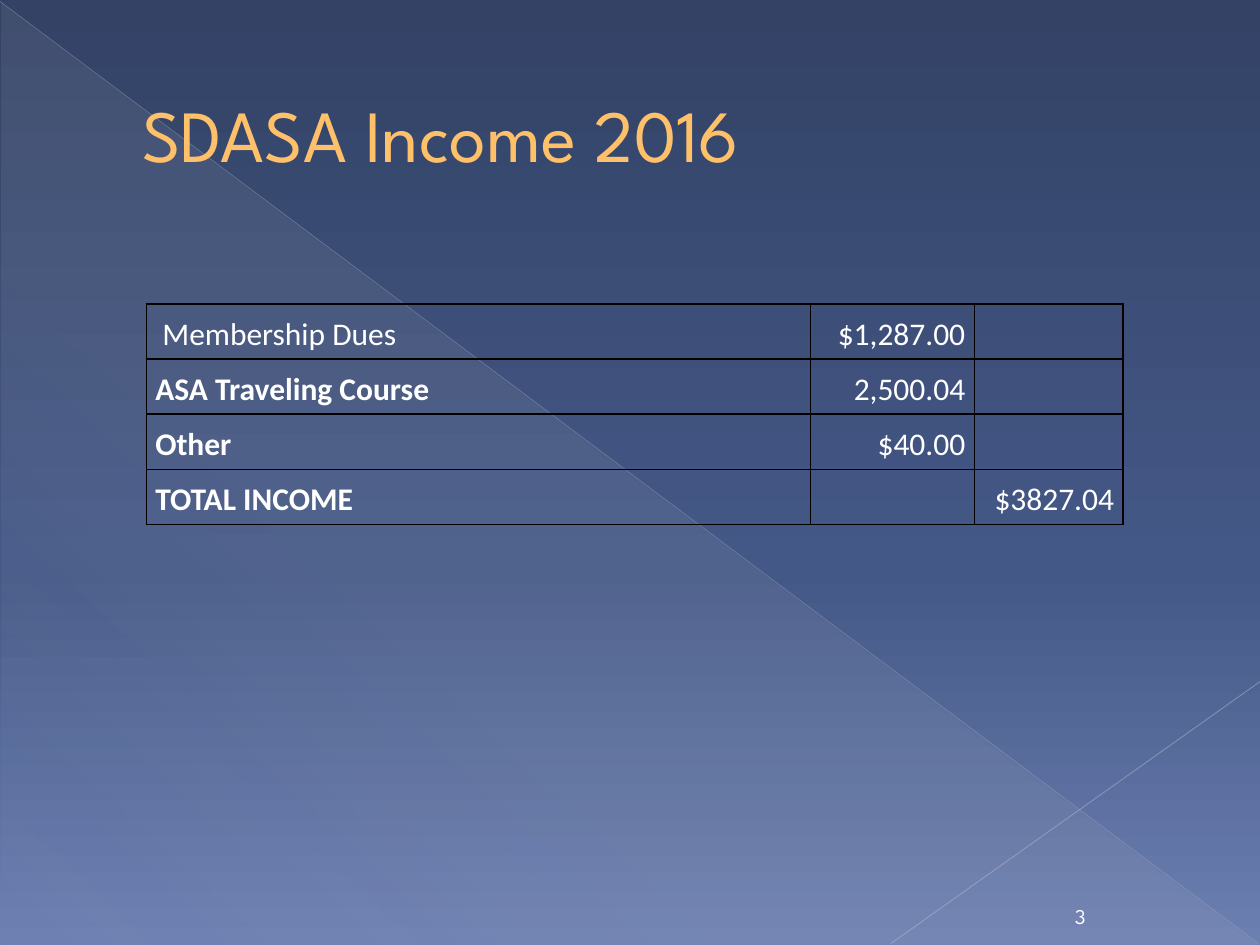
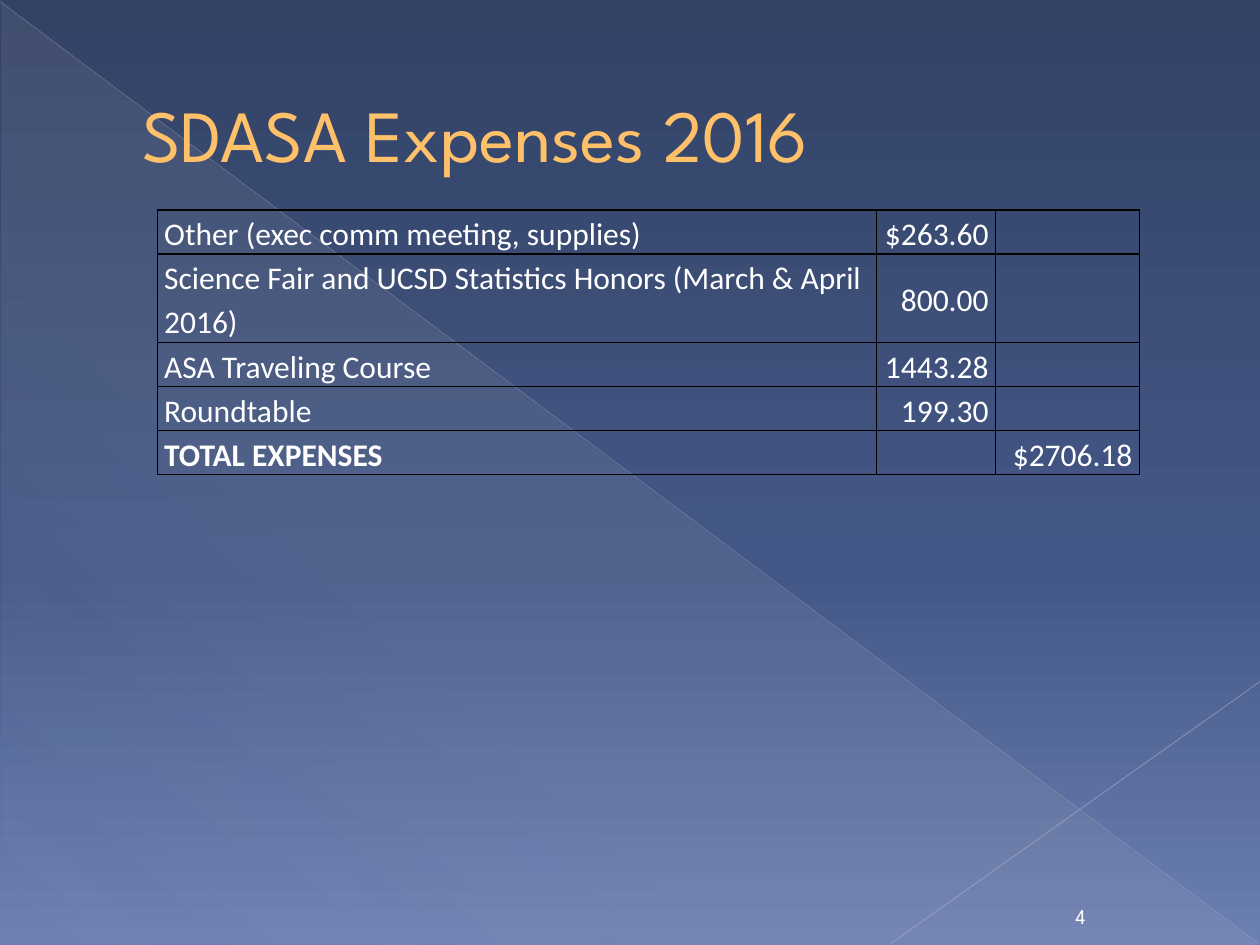
"""Build two slides with the yearly income and expenses tables."""
import pptx
import pptx.dml.color
import pptx.enum.shapes
import pptx.enum.text
import pptx.oxml
import pptx.oxml.ns
import pptx.util

Cm = pptx.util.Cm
Pt = pptx.util.Pt
ALIGN = pptx.enum.text.PP_ALIGN
ANCHOR = pptx.enum.text.MSO_ANCHOR

WHITE, GOLD, BRONZE, BLACK = "FFFFFF", "FFC06A", "A67800", "000000"
HEAD, BODY = "League Spartan", "Calibri"
SKY = [(0, "334265", 100), (60, "445887", 100), (100, "6C7FB1", 100)]
HAZE = [(0, "D4D4D6", 10), (70, "D4D4D6", 8), (100, "D4D4D6", 1)]
LINES = [
    ((0, 0.03, 25.37, 19.02), "B9BDC8", 0.39, 35),
    ((25.4, 13.74, 17.96, 19.02), "C1C4CE", 0.47, 45),
]

PAGES = [
    {
        "title": "SDASA Income 2016",
        "page": "3",
        "place": (2.95, 6.13),
        "cols": (13.39, 3.3, 3),
        "rows": [1.11] * 4,
        "inset": 0.18,
        "bold": {"ASA Traveling Course", "Other", "TOTAL INCOME"},
        "cells": [
            (" Membership Dues", "$1,287.00", ""),
            ("ASA Traveling Course", "2,500.04", ""),
            ("Other", "$40.00", ""),
            ("TOTAL INCOME", "", "$3827.04"),
        ],
    },
    {
        "title": "SDASA Expenses 2016",
        "page": "4",
        "place": (3.17, 4.23),
        "cols": (14.5, 2.4, 2.9),
        "rows": [0.89, 1.78, 0.89, 0.89, 0.89],
        "inset": 0.14,
        "bold": {"TOTAL EXPENSES"},
        "cells": [
            ("Other (exec comm meeting, supplies)", "$263.60", ""),
            ("Science Fair and UCSD Statistics Honors (March & April 2016)", "800.00", ""),
            ("ASA Traveling Course", "1443.28", ""),
            ("Roundtable", "199.30", ""),
            ("TOTAL EXPENSES", "", "$2706.18"),
        ],
    },
]


def tint(color):
    return pptx.dml.color.RGBColor.from_string(color)


def node(tag, inner="", attrs=""):
    space = pptx.oxml.ns.nsdecls("a")
    return pptx.oxml.parse_xml(f"<a:{tag} {space} {attrs}>{inner}</a:{tag}>")


def paint(color, alpha=100):
    return f'<a:srgbClr val="{color}"><a:alpha val="{alpha * 1000}"/></a:srgbClr>'


def blend(fill, root, stops, angle):
    fill.gradient()
    fill.gradient_angle = 360 - angle
    old = root.xpath(".//a:gsLst")[0]
    inner = "".join(
        f'<a:gs pos="{pos * 1000}">{paint(color, alpha)}</a:gs>'
        for pos, color, alpha in stops
    )
    old.getparent().replace(old, node("gsLst", inner))


def style(para, font, size, color, bold=False):
    for run in para.runs:
        run.font.name = font
        run.font.size = Pt(size)
        run.font.bold = bold
        run.font.color.rgb = tint(color)


def label(slide, text, box, size, color, anchor):
    frame = slide.shapes.add_textbox(*map(Cm, box)).text_frame
    frame.word_wrap = True
    frame.vertical_anchor = anchor
    frame.text = text
    para = frame.paragraphs[0]
    style(para, HEAD, size, color)
    return para


def backdrop(slide):
    blend(slide.background.fill, slide.background._cSld, SKY, 90)
    kind = pptx.enum.shapes.MSO_SHAPE.RIGHT_TRIANGLE
    haze = slide.shapes.add_shape(kind, Cm(0.03), Cm(0.05), Cm(25.35), Cm(19))
    haze.shadow.inherit = False
    haze.line.fill.background()
    blend(haze.fill, haze._element, HAZE, 133)
    straight = pptx.enum.shapes.MSO_CONNECTOR.STRAIGHT
    for ends, color, width, alpha in LINES:
        line = slide.shapes.add_connector(straight, *map(Cm, ends))
        line.line.width = Pt(width)
        line.line.color.rgb = tint(color)
        shade = line._element.xpath(".//a:ln//a:srgbClr")[0]
        shade.append(node("alpha", attrs=f'val="{alpha * 1000}"'))
        line._element.spPr.append(node("effectLst"))


def heading(slide, text):
    para = label(slide, text, (1.27, 0.74, 22.86, 3.89), 42, GOLD, ANCHOR.MIDDLE)
    para._p.get_or_add_pPr().set("marL", str(Cm(1.35)))
    edge = node("ln", f"<a:solidFill>{paint(BRONZE)}</a:solidFill>", 'w="6350"')
    para.runs[0].font._element.insert(0, edge)


def frame_cell(cell):
    props = cell._tc.get_or_add_tcPr()
    for spot, side in enumerate("LRTB"):
        fill = f"<a:solidFill>{paint(BLACK)}</a:solidFill>"
        props.insert(spot, node(f"ln{side}", fill, 'w="12700"'))


def ledger(slide, page):
    cols, rows = page["cols"], page["rows"]
    size = (sum(cols), sum(rows))
    table = slide.shapes.add_table(
        len(rows), len(cols), *map(Cm, page["place"] + size)
    ).table
    table.first_row = table.horz_banding = False
    for col, width in zip(table.columns, cols):
        col.width = Cm(width)
    for row, height, texts in zip(table.rows, rows, page["cells"]):
        row.height = Cm(height)
        for spot, (cell, text) in enumerate(zip(row.cells, texts)):
            cell.text = text
            cell.fill.background()
            cell.vertical_anchor = ANCHOR.MIDDLE
            cell.margin_left = cell.margin_right = Cm(page["inset"])
            cell.margin_top = cell.margin_bottom = 0
            frame_cell(cell)
            para = cell.text_frame.paragraphs[0]
            para.alignment = ALIGN.RIGHT if spot else ALIGN.LEFT
            if text:
                para.line_spacing = 1.15
            style(para, BODY, 18, WHITE, text in page["bold"])


def main():
    deck = pptx.Presentation()
    deck.slide_width, deck.slide_height = Cm(25.4), Cm(19.05)
    for page in PAGES:
        slide = deck.slides.add_slide(deck.slide_layouts[6])
        backdrop(slide)
        heading(slide, page["title"])
        ledger(slide, page)
        number = label(
            slide, page["page"], (21.08, 18.01, 1.4, 0.84), 12, WHITE, ANCHOR.BOTTOM
        )
        number.alignment = ALIGN.CENTER
    deck.save("out.pptx")


if __name__ == "__main__":
    main()
